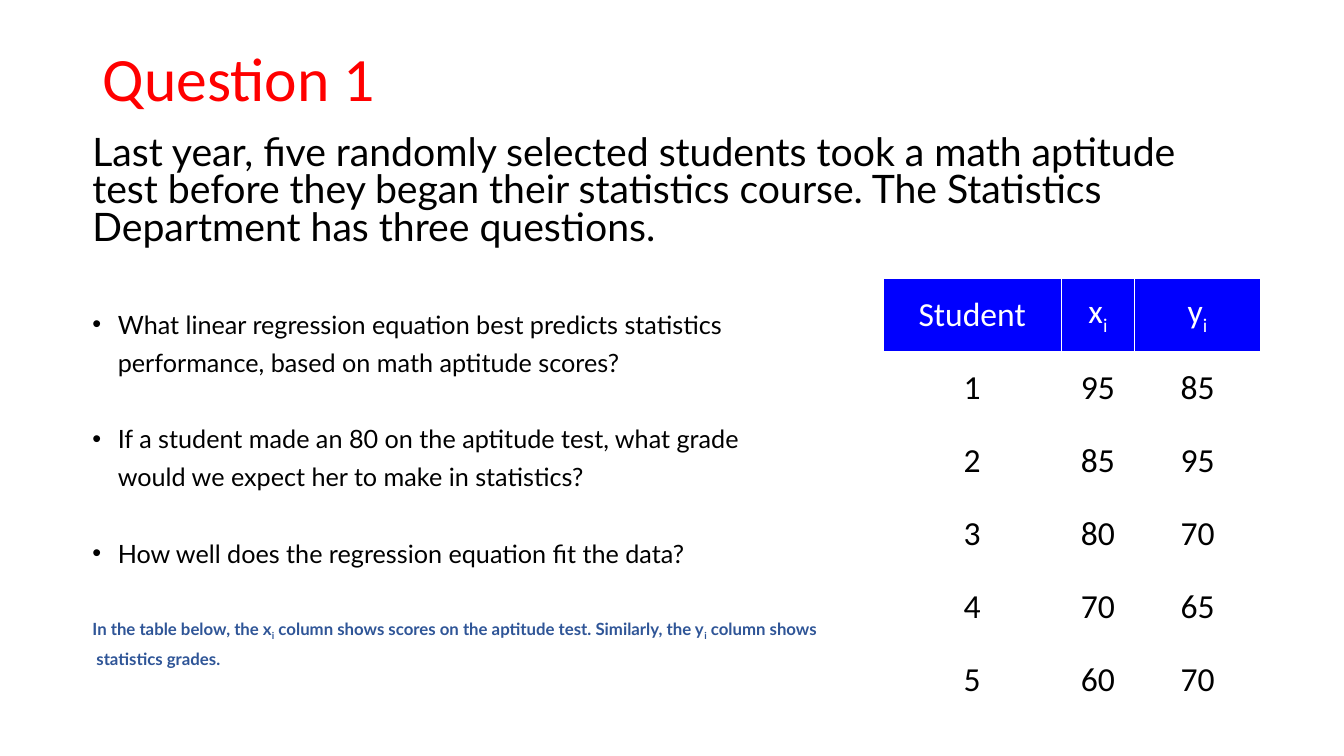
import pptx
import pptx.util
import pptx.dml.color
import pptx.enum.text
import pptx.oxml
import pptx.oxml.ns
from lxml import etree

Cm = pptx.util.Cm
Pt = pptx.util.Pt
RGBColor = pptx.dml.color.RGBColor
PP_ALIGN = pptx.enum.text.PP_ALIGN
MSO_ANCHOR = pptx.enum.text.MSO_ANCHOR
MSO_AUTO_SIZE = pptx.enum.text.MSO_AUTO_SIZE
qn = pptx.oxml.ns.qn

RED = RGBColor(0xFF, 0x00, 0x00)
BLACK = RGBColor(0x00, 0x00, 0x00)
WHITE = RGBColor(0xFF, 0xFF, 0xFF)
HEADER_BLUE = RGBColor(0x00, 0x00, 0xFF)
NOTE_BLUE = RGBColor(0x2F, 0x55, 0x97)


def write_text(paragraph, text, font_name, size, color, bold=False):
    for position, piece in enumerate(text.split("|")):
        run = paragraph.add_run()
        run.text = piece
        run.font.name = font_name
        run.font.size = Pt(size)
        run.font.color.rgb = color
        run.font.bold = bold
        if position % 2:
            run._r.get_or_add_rPr().set("baseline", "-25000")


def add_white_borders(cell):
    properties = cell._tc.get_or_add_tcPr()
    for position, side in enumerate(("a:lnL", "a:lnR", "a:lnT", "a:lnB")):
        border = etree.Element(qn(side), w=str(Pt(0.5)))
        fill = etree.SubElement(border, qn("a:solidFill"))
        etree.SubElement(fill, qn("a:srgbClr"), val=str(WHITE))
        properties.insert(position, border)


deck = pptx.Presentation()
deck.slide_width = Cm(33.87)
deck.slide_height = Cm(19.05)
slide = deck.slides.add_slide(deck.slide_layouts[5])

title = slide.shapes.title
title.left, title.top, title.width, title.height = Cm(2.34), Cm(1.02), Cm(29.21), Cm(2.06)
title.text_frame.auto_size = MSO_AUTO_SIZE.NONE
title.text_frame.vertical_anchor = MSO_ANCHOR.MIDDLE
heading = title.text_frame.paragraphs[0]
heading.alignment = PP_ALIGN.LEFT
heading.line_spacing = 0.9
write_text(heading, "Question 1", "Calibri", 44, RED)

body = slide.shapes.add_textbox(Cm(2.08), Cm(3.3), Cm(29.44), Cm(13.84)).text_frame
body.word_wrap = True

INDENT = Cm(0.64)
body_lines = [
    ("Last year, five randomly selected students took a math aptitude test before they began "
     "their statistics course. The Statistics Department has three questions.", 28, 10, 0, False),
    ("What linear regression equation best predicts statistics", 18, 47, INDENT, True),
    ("performance, based on math aptitude scores?", 18, 10, INDENT, False),
    ("If a student made an 80 on the aptitude test, what grade", 18, 37.3, INDENT, True),
    ("would we expect her to make in statistics?", 18, 10, INDENT, False),
    ("How well does the regression equation fit the data?", 18, 37.3, INDENT, True),
    ("In the table below, the x|i| column shows scores on the aptitude test. "
     "Similarly, the y|i| column shows", 12, 37.3, 0, False),
    ("statistics grades.", 12, 10, Cm(0.1), False),
]
for number, (text, size, space_before, margin, bulleted) in enumerate(body_lines):
    paragraph = body.add_paragraph() if number else body.paragraphs[0]
    paragraph.line_spacing = 0.8
    paragraph.space_before = Pt(space_before)
    is_note = size == 12
    write_text(paragraph, text, "Lato", size, NOTE_BLUE if is_note else BLACK, is_note)
    properties = paragraph._p.get_or_add_pPr()
    properties.set("marL", str(margin))
    if bulleted:
        properties.set("indent", str(-margin))
        etree.SubElement(properties, qn("a:buFont"), typeface="Arial")
        etree.SubElement(properties, qn("a:buChar"), char="•")

scores = [
    ("Student", "x|i", "y|i"),
    ("1", "95", "85"),
    ("2", "85", "95"),
    ("3", "80", "70"),
    ("4", "70", "65"),
    ("5", "60", "70"),
]
score_table = slide.shapes.add_table(
    len(scores), 3, Cm(22.25), Cm(7.01), Cm(9.52), Cm(11.04)).table
score_table.horz_banding = False
for column, width in zip(score_table.columns, (4.5, 1.84, 3.18)):
    column.width = Cm(width)
for row_number, values in enumerate(scores):
    score_table.rows[row_number].height = Cm(1.84)
    is_header = row_number == 0
    for column_number, value in enumerate(values):
        cell = score_table.cell(row_number, column_number)
        cell.vertical_anchor = MSO_ANCHOR.MIDDLE
        cell.fill.solid()
        cell.fill.fore_color.rgb = HEADER_BLUE if is_header else WHITE
        add_white_borders(cell)
        paragraph = cell.text_frame.paragraphs[0]
        paragraph.alignment = PP_ALIGN.CENTER
        write_text(paragraph, value, "Calibri", 24, WHITE if is_header else BLACK)

deck.save("out.pptx")
